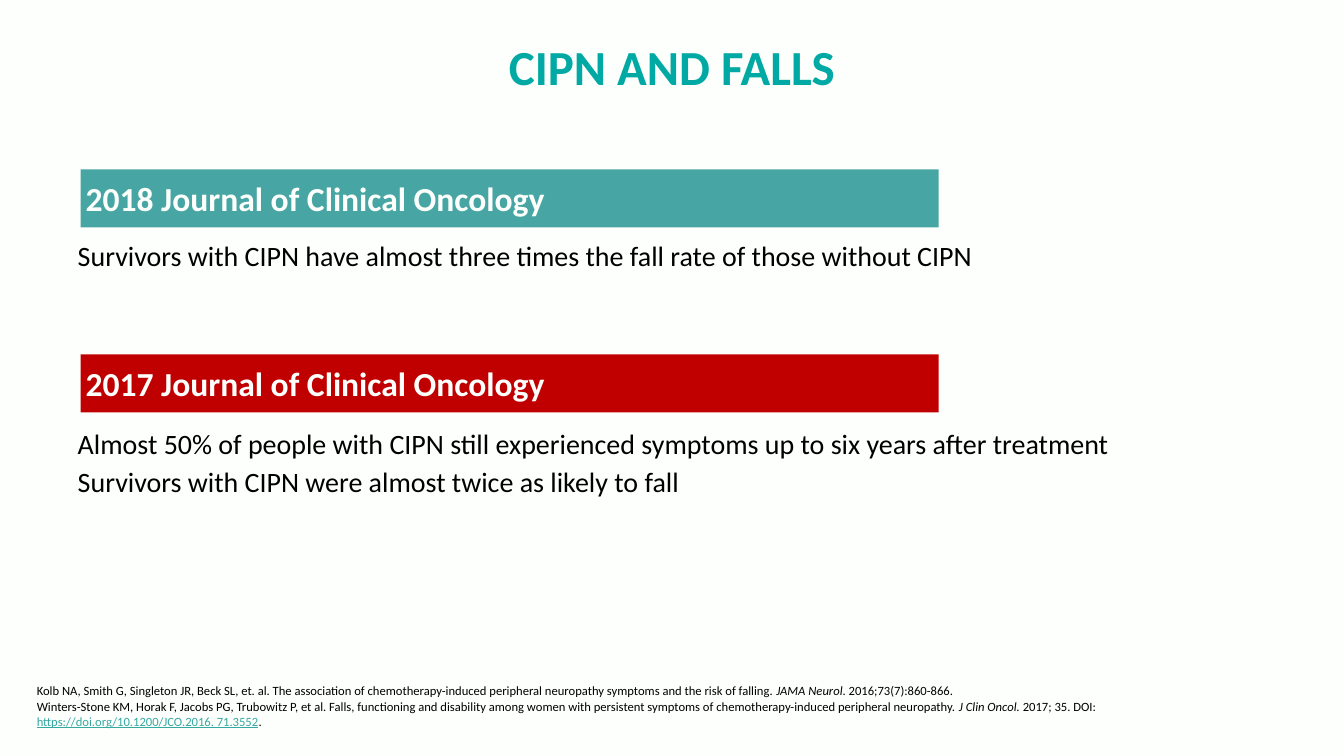
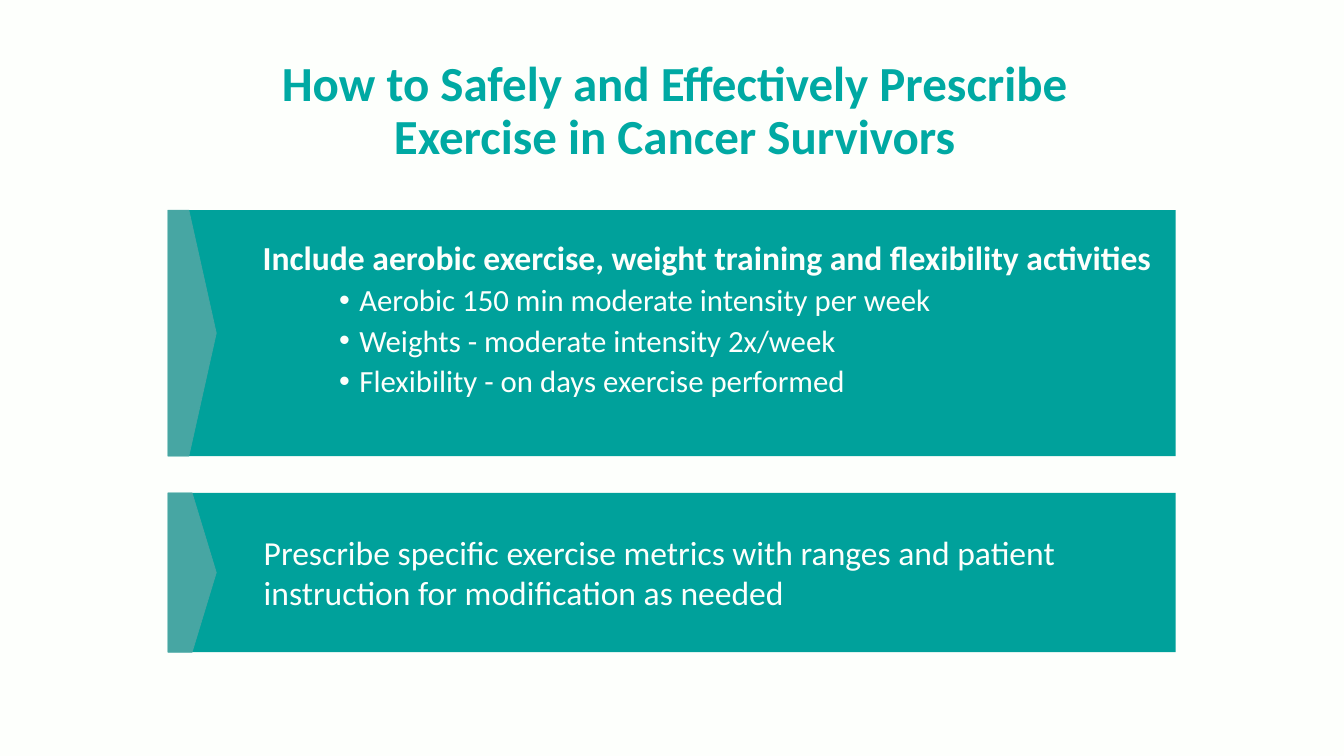
"""Build two slides on neuropathy, falls and exercise for cancer survivors."""
import dataclasses

import pptx
import pptx.dml.color
import pptx.enum.shapes
import pptx.enum.text
import pptx.oxml
import pptx.oxml.ns
import pptx.util

Pt = pptx.util.Pt
Shape = pptx.enum.shapes.MSO_SHAPE
Align = pptx.enum.text.PP_ALIGN
Anchor = pptx.enum.text.MSO_ANCHOR


@dataclasses.dataclass(frozen=True)
class Theme:
    font: str = "Calibri"
    paper: str = "FDFFFC"
    ink: str = "000000"
    title: str = "00A9A3"
    panel: str = "00A19B"
    accent: str = "47A6A3"
    alert: str = "C00000"
    link: str = "35A8A2"
    title_size: float = 70
    heading_size: float = 48
    bullet_size: float = 44
    body_size: float = 40
    reference_size: float = 18
    tight: float = 0.9


THEME = Theme()
SLIDE_SIZE = (1919.52, 1080)

FALLS_TITLE = ("CIPN AND FALLS", (0, 48.2, 1919.52, 103))
FINDINGS = [
    ("2018 Journal of Clinical Oncology", THEME.accent, 241.9, 345.6,
     ["Survivors with CIPN have almost three times the fall rate of those without CIPN"]),
    ("2017 Journal of Clinical Oncology", THEME.alert, 506.2, 615.2,
     ["Almost 50% of people with CIPN still experienced symptoms up to six years after treatment",
      "Survivors with CIPN were almost twice as likely to fall"]),
]
REFERENCES = [
    [("Kolb NA, Smith G, Singleton JR, Beck SL, et. al. The association of chemotherapy-induced "
      "peripheral neuropathy symptoms and the risk of falling. ", "plain"),
     ("JAMA Neurol", "italic"), (". 2016;73(7):860-866.", "plain")],
    [("Winters-Stone KM, Horak F, Jacobs PG, Trubowitz P, et al. Falls, functioning and disability "
      "among women with persistent symptoms of chemotherapy-induced peripheral neuropathy. ", "plain"),
     ("J Clin Oncol. ", "italic"), ("2017; 35. DOI: ", "plain"),
     ("https://doi.org/10.1200/JCO.2016. 71.3552", "link"), (".", "plain")],
]

EXERCISE_TITLE = ("How to Safely and Effectively Prescribe Exercise in Cancer Survivors",
                  (371.5, 70, 1184.4, 180))
ACTIVITIES = "Include aerobic exercise, weight training and flexibility activities"
ACTIVITY_BULLETS = [
    "Aerobic 150 min moderate intensity per week",
    "Weights - moderate intensity 2x/week",
    "Flexibility - on days exercise performed",
]
METRICS = ("Prescribe specific exercise metrics with ranges and patient instruction "
           "for modification as needed")
PANELS = [(300.2, 351.4, 0.567), (704.2, 227.5, 0.5)]
PANEL_LEFT, PANEL_WIDTH, ARROW_WIDTH = 239.8, 1439.3, 69.1
PANEL_TEXT_LEFT, PANEL_TEXT_WIDTH = 362.2, 1296


def color(value):
    return pptx.dml.color.RGBColor.from_string(value)


def style(font, size, ink, bold=False):
    font.name, font.size, font.bold = THEME.font, Pt(size), bold
    font.color.rgb = color(ink)


def add_page(deck):
    page = deck.slides.add_slide(deck.slide_layouts[6])
    page.background.fill.solid()
    page.background.fill.fore_color.rgb = color(THEME.paper)
    return page


def add_block(page, kind, bounds, fill, outline=None, adjustment=None):
    block = page.shapes.add_shape(kind, *map(Pt, bounds))
    block.shadow.inherit = False
    block.fill.solid()
    block.fill.fore_color.rgb = color(fill)
    if outline:
        block.line.color.rgb = color(outline)
        block.line.width = Pt(1)
    else:
        block.line.fill.background()
    if adjustment is not None:
        block.adjustments[0] = adjustment
    return block


def add_text(page, bounds, lines, size, ink, bold=False, align=Align.LEFT,
             spacing=None, gap=0, insets=(7.2, 3.6), anchor=Anchor.TOP):
    box = page.shapes.add_textbox(*map(Pt, bounds))
    frame = box.text_frame
    frame.word_wrap = True
    frame.vertical_anchor = anchor
    frame.margin_left = frame.margin_right = Pt(insets[0])
    frame.margin_top = frame.margin_bottom = Pt(insets[1])
    frame.text = "\n".join(lines)
    for index, para in enumerate(frame.paragraphs):
        para.alignment = align
        para.line_spacing = spacing
        para.space_before = Pt(gap if index else 0)
        for span in para.runs:
            style(span.font, size, ink, bold)
    return frame


def add_title(page, title):
    text, bounds = title
    add_text(page, bounds, [text], THEME.title_size, THEME.title, True, Align.CENTER,
             THEME.tight, insets=(14.4, 7.2), anchor=Anchor.MIDDLE)


def add_bullet(para, margin, hanging):
    properties = para._p.get_or_add_pPr()
    properties.set("marL", str(Pt(margin)))
    properties.set("indent", str(-Pt(hanging)))
    namespace = pptx.oxml.ns.nsdecls("a")
    for tag in ('buFont {} typeface="Arial"', 'buChar {} char="•"'):
        properties.append(pptx.oxml.parse_xml("<a:" + tag.format(namespace) + "/>"))


def add_references(page):
    frame = add_text(page, (45.4, 972.7, 1635.8, 72.7), [""] * len(REFERENCES),
                     THEME.reference_size, THEME.ink)
    for para, pieces in zip(frame.paragraphs, REFERENCES):
        for text, look in pieces:
            span = para.add_run()
            span.text = text
            style(span.font, THEME.reference_size, THEME.link if look == "link" else THEME.ink)
            span.font.italic = look == "italic"
            span.font.underline = look == "link"


def build_falls(deck):
    page = add_page(deck)
    add_title(page, FALLS_TITLE)
    for journal, fill, band_top, text_top, statements in FINDINGS:
        band = add_block(page, Shape.PENTAGON, (115.2, band_top, 1225.4, 82.8), fill, adjustment=0)
        band.text_frame.text = journal
        band.text_frame.vertical_anchor = Anchor.MIDDLE
        para = band.text_frame.paragraphs[0]
        para.alignment = Align.LEFT
        style(para.runs[0].font, THEME.heading_size, THEME.paper, True)
        add_text(page, (111, text_top, 1705, 54 * len(statements)), statements,
                 THEME.body_size, THEME.ink, spacing=THEME.tight, gap=10, insets=(0, 0))
    add_references(page)


def build_exercise(deck):
    page = add_page(deck)
    add_title(page, EXERCISE_TITLE)
    for top, height, point in PANELS:
        add_block(page, Shape.RECTANGLE, (PANEL_LEFT, top, PANEL_WIDTH, height), THEME.panel)
        add_block(page, Shape.PENTAGON, (PANEL_LEFT, top, ARROW_WIDTH, height),
                  THEME.accent, THEME.accent, point)
    frame = add_text(page, (PANEL_TEXT_LEFT, 342, PANEL_TEXT_WIDTH, 286.6),
                     [ACTIVITIES, *ACTIVITY_BULLETS], THEME.bullet_size, THEME.paper,
                     spacing=THEME.tight, gap=10)
    heading, *bullets = frame.paragraphs
    heading.alignment = Align.CENTER
    style(heading.runs[0].font, THEME.heading_size, THEME.paper, True)
    for para in bullets:
        add_bullet(para, 144, 28.8)
    add_text(page, (PANEL_TEXT_LEFT, 752, PANEL_TEXT_WIDTH, 144), [METRICS],
             THEME.heading_size, THEME.paper, insets=(14.4, 7.2))


def main():
    deck = pptx.Presentation()
    deck.slide_width, deck.slide_height = map(Pt, SLIDE_SIZE)
    build_falls(deck)
    build_exercise(deck)
    deck.save("out.pptx")


if __name__ == "__main__":
    main()
